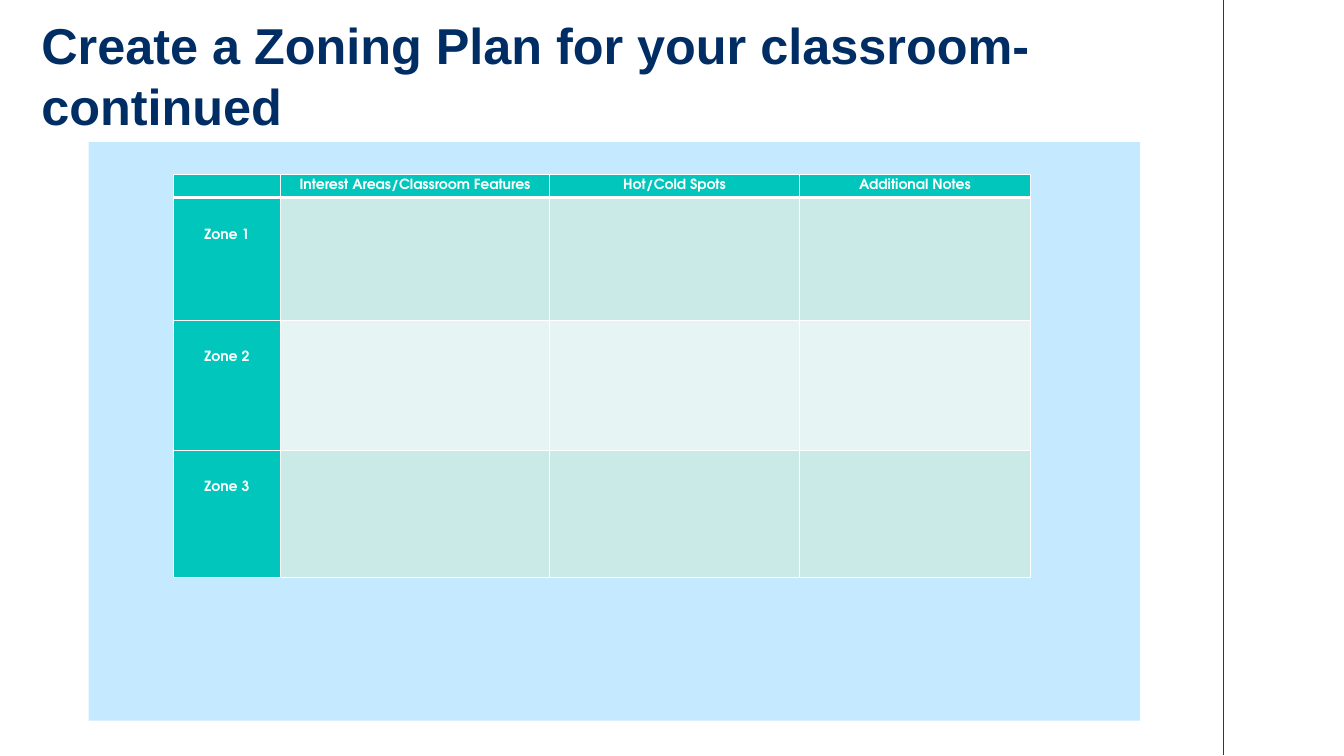
"""Build the classroom zoning plan slide."""
from lxml import etree
from pptx import Presentation
from pptx.dml.color import RGBColor
from pptx.enum.shapes import MSO_CONNECTOR, MSO_SHAPE
from pptx.enum.text import MSO_ANCHOR, MSO_AUTO_SIZE, PP_ALIGN
from pptx.oxml.ns import qn
from pptx.util import Inches, Pt

LINE, RECT = MSO_CONNECTOR.STRAIGHT, MSO_SHAPE.RECTANGLE
TOP, GROW = MSO_ANCHOR.TOP, MSO_AUTO_SIZE.SHAPE_TO_FIT_TEXT
LEFT, CENTER = PP_ALIGN.LEFT, PP_ALIGN.CENTER
TEAL, WHITE = "00C6BB", "FFFFFF"
BANDS = ["CAEAE7", "E6F5F3"]


def color(code):
    return RGBColor.from_string(code)


def assign(item, values):
    for key, value in values.items():
        setattr(item, key, value)


deck = Presentation()
assign(deck, {"slide_width": Inches(13.33), "slide_height": Inches(7.5)})
slide = deck.slides.add_slide(deck.slide_layouts[5])
shapes = slide.shapes

rule = shapes.add_connector(LINE, Inches(12.13), Inches(0), Inches(12.13), Inches(7.49))
rule.line.color.rgb = color("00476E")
rule.line.width = Pt(0.5)
etree.SubElement(rule._element.spPr, qn("a:effectLst"))

panel = shapes.add_shape(RECT, Inches(0.88), Inches(1.41), Inches(10.43), Inches(5.74))
panel.shadow.inherit = False
panel.fill.solid()
panel.fill.fore_color.rgb = color("C5EAFF")
panel.line.fill.background()

title = shapes.title
assign(title, {"left": Inches(0.31), "top": Inches(0.09),
               "width": Inches(10.73), "height": Inches(1.31)})
frame = title.text_frame
frame.text = "Create a Zoning Plan for your classroom-\ncontinued"
assign(frame, {"word_wrap": True, "auto_size": GROW, "vertical_anchor": TOP})
for para in frame.paragraphs:
    assign(para, {"alignment": LEFT, "line_spacing": 1.0})
    assign(para.runs[0].font, {"name": "Arial", "size": Pt(36), "bold": True})
    para.runs[0].font.color.rgb = color("002E64")

heads = ["", "Interest Areas/Classroom Features", "Hot/Cold Spots", "Additional Notes"]
rows = [heads] + [[f"Zone {n}", "", "", ""] for n in range(1, 4)]
widths = [1.06, 2.67, 2.48, 2.29]
heights = [0.23, 1.22, 1.29, 1.26]
grid = shapes.add_table(4, 4, Inches(1.72), Inches(1.73),
                        Inches(sum(widths)), Inches(sum(heights))).table
for col, width in zip(grid.columns, widths):
    col.width = Inches(width)
for row, height in zip(grid.rows, heights):
    row.height = Inches(height)

for r, row in enumerate(rows):
    for c, text in enumerate(row):
        cell = grid.cell(r, c)
        props = cell._tc.get_or_add_tcPr()
        thick = {"L": 1, "R": 1, "T": 3 if r == 1 else 1, "B": 3 if r == 0 else 1}
        for side, width in thick.items():
            edge = etree.SubElement(props, qn(f"a:ln{side}"), w=str(Pt(width)))
            fill = etree.SubElement(edge, qn("a:solidFill"))
            etree.SubElement(fill, qn("a:srgbClr"), val=WHITE)
        cell.fill.solid()
        cell.fill.fore_color.rgb = color(TEAL if r == 0 or c == 0 else BANDS[(r - 1) % 2])
        assign(cell, {"margin_left": Inches(0.07), "margin_right": Inches(0.07),
                      "margin_top": Inches(0.31 if r else 0.05),
                      "margin_bottom": 0, "vertical_anchor": TOP})
        para = cell.text_frame.paragraphs[0]
        para.alignment = CENTER
        if text:
            run = para.add_run()
            run.text = text
            assign(run.font, {"name": "TeX Gyre Adventor", "size": Pt(10), "bold": True})
            run.font.color.rgb = color(WHITE)
        else:
            etree.SubElement(para._p, qn("a:endParaRPr"), sz="1000")

deck.save("out.pptx")
